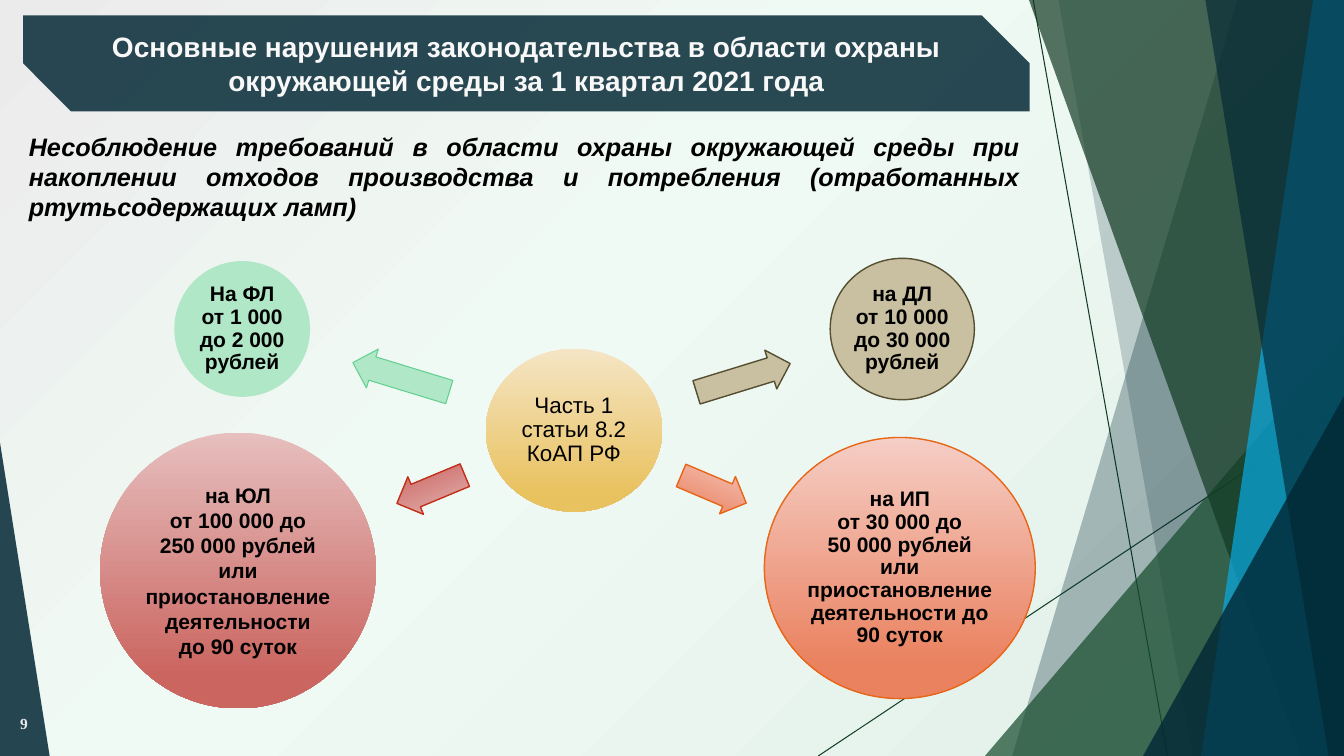
import lxml.etree
import pptx
import pptx.dml.color
import pptx.enum.dml
import pptx.enum.shapes
import pptx.enum.text
import pptx.oxml
import pptx.oxml.ns
import pptx.util

Pt = pptx.util.Pt
SHAPE = pptx.enum.shapes.MSO_SHAPE
ALIGN = pptx.enum.text.PP_ALIGN
WIDTH, HEIGHT = 960, 540
NAVY, DARK_GREEN, BLACK = "022734", "113A22", "000000"


def color(target, value):
    target.rgb = pptx.dml.color.RGBColor.from_string(value)


def write(frame, text, size=15, font="Arial", ink=BLACK, bold=False, italic=False,
          align=ALIGN.CENTER, spacing=None, inset=None,
          anchor=pptx.enum.text.MSO_ANCHOR.MIDDLE):
    frame.word_wrap = True
    frame.vertical_anchor = anchor
    if inset is not None:
        frame.margin_left = frame.margin_right = Pt(inset)
        frame.margin_top = frame.margin_bottom = Pt(inset)
    for index, line in enumerate(text.split("\n")):
        paragraph = frame.add_paragraph() if index else frame.paragraphs[0]
        paragraph.alignment = align
        paragraph.space_before = Pt(0)
        if spacing:
            paragraph.line_spacing = spacing
        run = paragraph.add_run()
        run.text = line
        run.font.size, run.font.name = Pt(size), font
        run.font.bold, run.font.italic = bold, italic
        color(run.font.color, ink)


class Deck:
    def __init__(self):
        self.presentation = pptx.Presentation()
        self.presentation.slide_width = Pt(WIDTH)
        self.presentation.slide_height = Pt(HEIGHT)
        self.slide = self.presentation.slides.add_slide(self.presentation.slide_layouts[5])
        self.shapes = self.slide.shapes

    def background(self, stops):
        fill = self.slide.background.fill
        fill.gradient()
        gradient = self.slide.background._cSld.bg.bgPr.find(pptx.oxml.ns.qn("a:gradFill"))
        stop_xml = "".join(
            f'<a:gs pos="{position * 1000}"><a:srgbClr val="{value}">'
            f'<a:alpha val="{opacity * 1000}"/></a:srgbClr></a:gs>'
            for position, value, opacity in stops)
        radial = pptx.oxml.parse_xml(
            f'<a:gradFill {pptx.oxml.ns.nsdecls("a")} rotWithShape="1"><a:gsLst>{stop_xml}</a:gsLst>'
            '<a:path path="circle"><a:fillToRect l="100000" t="100000"/></a:path></a:gradFill>')
        gradient.getparent().replace(gradient, radial)

    def paint(self, shape, fill, opacity=100, line=None, line_width=1):
        shape.shadow.inherit = False
        if isinstance(fill, tuple):
            shape.fill.gradient()
            shape.fill.gradient_angle = 270
            for stop, value, position in zip(shape.fill.gradient_stops, fill, (0, 0.88)):
                color(stop.color, value)
                stop.position = position
        else:
            shape.fill.solid()
            color(shape.fill.fore_color, fill)
        if opacity < 100:
            value = shape._element.spPr.find(".//" + pptx.oxml.ns.qn("a:srgbClr"))
            alpha = lxml.etree.SubElement(value, pptx.oxml.ns.qn("a:alpha"))
            alpha.set("val", str(opacity * 1000))
        if line:
            color(shape.line.color, line)
            shape.line.width = Pt(line_width)
        else:
            shape.line.fill.background()

    def shape(self, kind, left, top, width, height, fill, adjust=(), rotation=0, **style):
        shape = self.shapes.add_shape(kind, Pt(left), Pt(top), Pt(width), Pt(height))
        for index, value in enumerate(adjust):
            shape.adjustments[index] = value
        shape.rotation = rotation
        self.paint(shape, fill, **style)
        return shape

    def ribbon(self, top_x, bottom_x, fill, opacity):
        builder = self.shapes.build_freeform(Pt(top_x), 0)
        builder.add_line_segments([(Pt(x), Pt(y)) for x, y in (
            (WIDTH, 0), (WIDTH, HEIGHT), (bottom_x, HEIGHT))])
        self.paint(builder.convert_to_shape(), fill, opacity)

    def line(self, start, end, ink):
        connector = self.shapes.add_connector(
            pptx.enum.shapes.MSO_CONNECTOR.STRAIGHT, *map(Pt, start + end))
        color(connector.line.color, ink)
        connector.line.width = Pt(0.75)
        lxml.etree.SubElement(connector._element.spPr, pptx.oxml.ns.qn("a:effectLst"))

    def circle(self, box, fill, text, line=None, **text_format):
        shape = self.shape(SHAPE.OVAL, *box, fill, line=line)
        write(shape.text_frame, text, inset=1.5, **text_format)

    def arrow(self, box, rotation, fill, line, line_width=1):
        self.shape(SHAPE.RIGHT_ARROW, *box, fill, (0.6, 0.5), rotation,
                   line=line, line_width=line_width)

    def text(self, left, top, width, height, text, **text_format):
        box = self.shapes.add_textbox(Pt(left), Pt(top), Pt(width), Pt(height))
        write(box.text_frame, text, **text_format)

    def title(self, left, top, width, height, text, **text_format):
        title = self.shapes.title
        title.left, title.top, title.width, title.height = map(Pt, (left, top, width, height))
        self.shapes._spTree.append(title._element)
        write(title.text_frame, text, **text_format)


def main():
    deck = Deck()
    deck.background([(0, "FFFFFF", 100), (0, "E1EFE9", 71),
                     (58, "F0FAF4", 100), (100, "EBEBEB", 100)])

    deck.line((738, 0), (834, HEIGHT), DARK_GREEN)
    deck.line((WIDTH, 290), (584.5, HEIGHT), "144126")
    deck.ribbon(884, 723, NAVY, 30)
    deck.ribbon(756, 852, NAVY, 20)
    deck.shape(SHAPE.ISOSCELES_TRIANGLE, 703.5, 240, 256.5, 300, "174D2D", [1], opacity=72)
    deck.ribbon(735, 929.5, DARK_GREEN, 70)
    deck.ribbon(938, 858, "09ABE4", 70)
    deck.ribbon(861, 949, NAVY, 65)
    deck.shape(SHAPE.ISOSCELES_TRIANGLE, 816.5, 283, 143.5, 257, NAVY, [1], opacity=80)
    deck.shape(SHAPE.ISOSCELES_TRIANGLE, 0, 316, 35.5, 224, NAVY, [0], opacity=85)

    deck.shape(SHAPE.SNIP_2_DIAG_RECTANGLE, 16.5, 11, 719, 68.5, NAVY, (0, 0.5), opacity=84)
    deck.title(34, 11, 684, 68.5,
               "Основные нарушения законодательства в области охраны окружающей среды "
               "за 1 квартал 2021 года", size=20, ink="F8F8F8", bold=True)
    deck.text(0, 502.5, 27, 29, "9", size=11, font="Times New Roman", ink="EBEBEB",
              bold=True, align=ALIGN.RIGHT)

    mint, sand = "B0E7C7", "C8C0A0"
    coral, rose = ("F5CEC5", "EA815F"), ("E6BFBE", "CB6560")
    olive, orange = "554E31", "E76618"
    deck.circle((347, 249, 126, 116.5), ("F5E5C5", "E9C260"),
                "Часть 1 статьи 8.2 КоАП РФ", size=16, spacing=0.9)
    deck.arrow((250.5, 255, 72, 29), 197, mint, "61D08E", 0.75)
    deck.circle((124.5, 186.5, 97, 97), mint,
                "На ФЛ\nот 1 000 до 2 000 рублей", bold=True, spacing=0.9)
    deck.arrow((496, 255.5, 70, 29), 342.9, sand, olive)
    deck.circle((593, 184.5, 103, 101), sand,
                "на ДЛ\nот 10 000\nдо 30 000\nрублей", olive, bold=True, spacing=0.9)
    deck.arrow((484.5, 335, 50.5, 29), 23, coral, orange)
    deck.circle((546, 312.5, 193.5, 186.5), coral,
                "на ИП\nот 30 000 до\n50 000 рублей или приостановление деятельности до 90 суток",
                orange, bold=True, spacing=0.9)
    deck.arrow((281.5, 335, 52.5, 29), 157.4, rose, "C42F1A")
    deck.circle((71.5, 309, 197, 197), rose,
                "на ЮЛ\nот 100 000 до\n250 000 рублей\nили приостановление деятельности\n"
                "до 90 суток", bold=True)

    deck.text(13.5, 90, 722, 73,
              "Несоблюдение требований в области охраны окружающей среды при накоплении "
              "отходов производства и потребления (отработанных ртутьсодержащих ламп)",
              size=18, bold=True, italic=True, align=ALIGN.JUSTIFY,
              anchor=pptx.enum.text.MSO_ANCHOR.TOP)
    deck.presentation.save("out.pptx")


if __name__ == "__main__":
    main()
